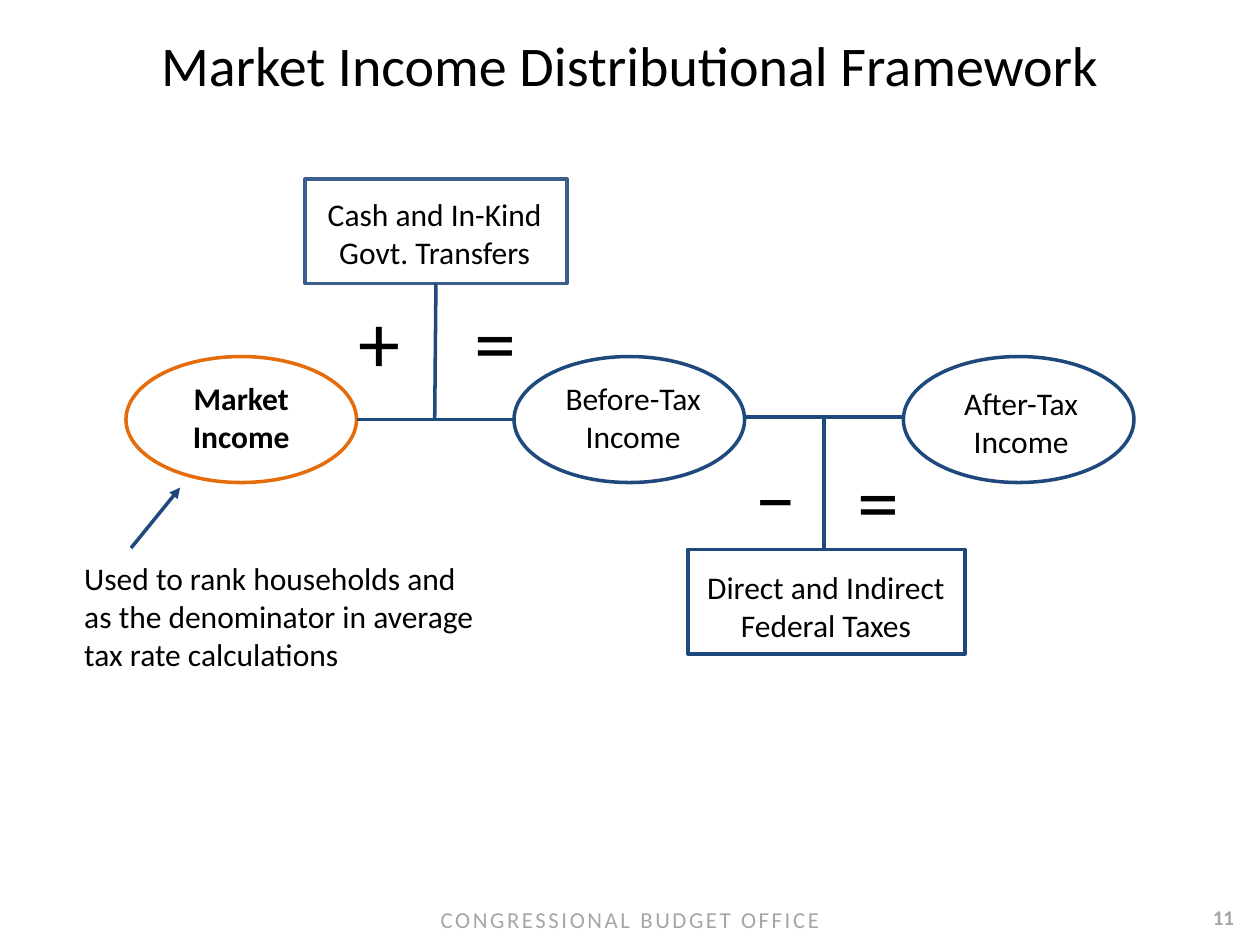
from dataclasses import dataclass

from lxml import etree
from pptx import Presentation
from pptx.dml.color import RGBColor
from pptx.enum.shapes import MSO_CONNECTOR, MSO_SHAPE
from pptx.enum.text import MSO_ANCHOR, PP_ALIGN
from pptx.oxml.ns import qn
from pptx.util import Inches, Pt

OVAL, RECTANGLE = MSO_SHAPE.OVAL, MSO_SHAPE.RECTANGLE
LEFT, CENTER = PP_ALIGN.LEFT, PP_ALIGN.CENTER
STRAIGHT = MSO_CONNECTOR.STRAIGHT


@dataclass(frozen=True)
class Theme:
    font: str = "Calibri"
    black: RGBColor = RGBColor(0x00, 0x00, 0x00)
    gray: RGBColor = RGBColor(0xA6, 0xA6, 0xA6)
    navy: RGBColor = RGBColor(0x1F, 0x49, 0x7D)
    steel: RGBColor = RGBColor(0x3A, 0x5F, 0x8C)
    orange: RGBColor = RGBColor(0xE4, 0x6C, 0x0A)
    title: int = 32
    body: int = 18
    operator: int = 48
    footer: int = 13
    page: int = 12
    line: int = 2


theme = Theme()

presentation = Presentation()
presentation.slide_width = Inches(10)
presentation.slide_height = Inches(7.5)
slide = presentation.slides.add_slide(presentation.slide_layouts[6])


def add_text(lines, box, size, align=CENTER, bold=False, color=theme.black, wrap=False):
    """Add a text box with one paragraph per line of text."""
    shape = slide.shapes.add_textbox(*map(Inches, box))
    frame = shape.text_frame
    frame.word_wrap = wrap
    frame.text = "\n".join(lines)
    for paragraph in frame.paragraphs:
        paragraph.alignment = align
        paragraph.font.name = theme.font
        paragraph.font.size = Pt(size)
        paragraph.font.bold = bold
        paragraph.font.color.rgb = color
    return frame


# Footer and title
add_text(["11"], (9.42, 7.13, 0.58, 0.31), theme.page, bold=True, color=theme.gray, wrap=True)
footer = add_text(["CONGRESSIONAL BUDGET OFFICE"], (0, 7.08, 10, 0.38), theme.footer,
                  color=theme.gray, wrap=True)
footer.vertical_anchor = MSO_ANCHOR.MIDDLE
footer.margin_top = Inches(0.1)
footer.paragraphs[0].runs[0].font._element.set("spc", "150")
add_text(["Market Income Distributional Framework"], (0, 0.19, 10, 0.64), theme.title, wrap=True)

# Income ovals and the boxes for transfers and taxes
outlines = [
    (OVAL, (1, 2.83, 1.83, 1), theme.orange),
    (OVAL, (4.08, 2.83, 1.83, 1), theme.navy),
    (OVAL, (7.17, 2.83, 1.83, 1), theme.navy),
    (RECTANGLE, (2.42, 1.42, 2.08, 0.83), theme.steel),
    (RECTANGLE, (5.46, 4.36, 2.2, 0.83), theme.navy),
]
for kind, box, color in outlines:
    shape = slide.shapes.add_shape(kind, *map(Inches, box))
    shape.shadow.inherit = False
    shape.fill.background()
    shape.line.color.rgb = color
    shape.line.width = Pt(theme.line)

labels = [
    (["Market", "Income"], (1.43, 2.96, 0.97, 0.71), True),
    (["Before-Tax", "Income"], (4.37, 2.96, 1.31, 0.71), False),
    (["After-Tax", "Income"], (7.54, 3, 1.13, 0.71), False),
    (["Cash and In-Kind", "Govt. Transfers"], (2.49, 1.5, 1.92, 0.71), False),
    (["Direct and Indirect", "Federal Taxes"], (5.5, 4.46, 2.11, 0.71), False),
]
for lines, box, bold in labels:
    add_text(lines, box, theme.body, bold=bold)

for symbol, left, top in [("+", 2.75, 2.25), ("=", 3.67, 2.25),
                          ("‒", 5.89, 3.46), ("=", 6.71, 3.51)]:
    add_text([symbol], (left, top, 0.54, 0.91), theme.operator, LEFT)

add_text(["Used to rank households and", "as the denominator in average", "tax rate calculations"],
         (0.57, 4.39, 3.39, 1.01), theme.body, LEFT)

# Connecting lines, and the arrow from the note to market income
connections = [
    ((2.83, 3.33, 4.08, 3.33), False),
    ((5.92, 3.31, 7.17, 3.31), False),
    ((6.54, 4.36, 6.54, 3.3), False),
    ((3.45, 3.33, 3.46, 2.25), False),
    ((1.04, 4.35, 1.43, 3.87), True),
]
for ends, has_arrowhead in connections:
    connector = slide.shapes.add_connector(STRAIGHT, *map(Inches, ends))
    connector.line.color.rgb = theme.navy
    connector.line.width = Pt(theme.line)
    if has_arrowhead:
        etree.SubElement(connector.line._get_or_add_ln(), qn("a:tailEnd"), type="triangle")
    etree.SubElement(connector._element.spPr, qn("a:effectLst"))

presentation.save("out.pptx")
